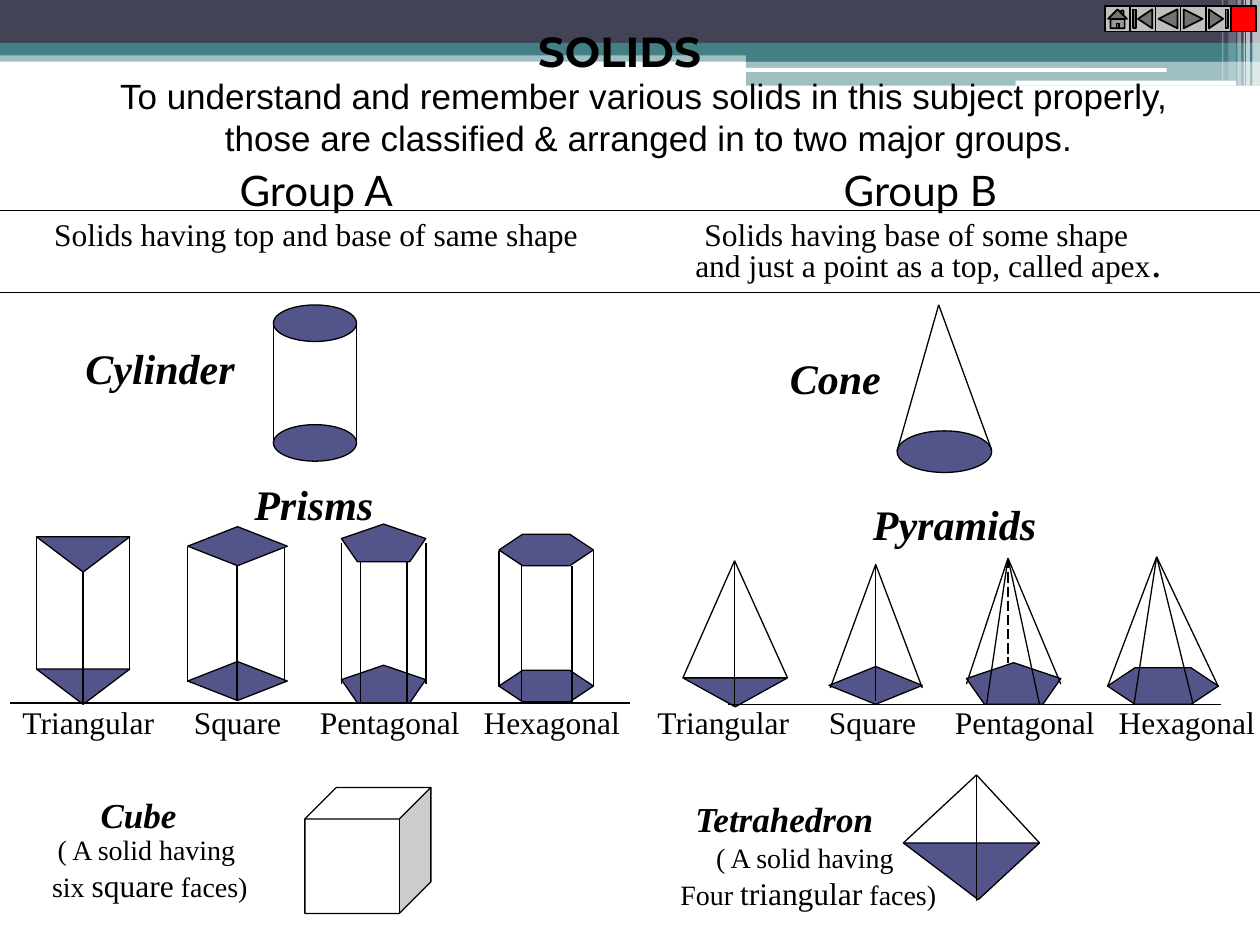
from dataclasses import dataclass

from lxml.etree import SubElement
from pptx import Presentation
from pptx.dml.color import RGBColor
from pptx.enum.dml import MSO_LINE
from pptx.enum.shapes import MSO_CONNECTOR, MSO_SHAPE
from pptx.enum.text import MSO_ANCHOR, MSO_AUTO_SIZE, PP_ALIGN
from pptx.oxml.ns import qn
from pptx.util import Inches, Pt

COLORS = {"ink": "000000", "paper": "FFFFFF", "face": "53548A", "navy": "424456",
          "teal": "438086", "button": "C0C0C0", "stop": "FF0000"}
SERIF = "Times New Roman"
Point = tuple[float, float]
Box = tuple[float, float, float, float]


@dataclass
class Bar:
    box: Box
    color: str
    opacity: int = 100
    shape: MSO_SHAPE = MSO_SHAPE.RECTANGLE


@dataclass
class Face:
    shape: MSO_SHAPE
    box: Box
    adjustment: float | None = None
    turned: bool = False


@dataclass
class Prism:
    """Edges start at the given points and run down by the height."""
    top: Face
    height: float
    edges: list[Point]


@dataclass
class Pyramid:
    base: Face
    apex: Point
    feet: list[Point]
    hidden_foot: Point | None = None


@dataclass
class Run:
    text: str
    size: int
    font: str = SERIF
    bold: bool = False
    italic: bool = False


@dataclass
class Caption:
    box: Box
    lines: list[list[Run]]
    centered: bool = False
    wrap: bool = False
    tabs: tuple[float, ...] = ()


def rgb(name: str) -> RGBColor:
    return RGBColor.from_string(COLORS[name])


def heading(text: str, size: int = 24) -> list[list[Run]]:
    return [[Run(text, size, bold=True, italic=True)]]


def add_filled(slide, kind: MSO_SHAPE, box: Box, color: str, outline: float = 0):
    shape = slide.shapes.add_shape(kind, *map(Inches, box))
    shape.shadow.inherit = False
    shape.fill.solid()
    shape.fill.fore_color.rgb = rgb(color)
    if outline:
        shape.line.color.rgb = rgb("ink")
        shape.line.width = Pt(outline)
    else:
        shape.line.fill.background()
    return shape


def add_bar(slide, bar: Bar) -> None:
    shape = add_filled(slide, bar.shape, bar.box, bar.color)
    if bar.opacity < 100:
        color = shape.element.spPr.find(f"{qn('a:solidFill')}/{qn('a:srgbClr')}")
        SubElement(color, qn("a:alpha"), val=str(bar.opacity * 1000))


def add_edge(slide, start: Point, end: Point, dashed: bool = False) -> None:
    edge = slide.shapes.add_connector(MSO_CONNECTOR.STRAIGHT, *map(Inches, start + end))
    edge.line.color.rgb = rgb("ink")
    edge.line.width = Pt(0.75)
    if dashed:
        edge.line.dash_style = MSO_LINE.LONG_DASH
    SubElement(edge.element.spPr, qn("a:effectLst"))


def add_face(slide, face: Face, drop: float = 0) -> None:
    left, top, width, height = face.box
    shape = add_filled(slide, face.shape, (left, top + drop, width, height), "face", 0.75)
    if face.adjustment is not None:
        shape.adjustments[0] = face.adjustment
    if face.turned:
        shape.rotation = 180


def add_prism(slide, prism: Prism) -> None:
    add_face(slide, prism.top)
    add_face(slide, prism.top, prism.height)
    for x, y in prism.edges:
        add_edge(slide, (x, y), (x, y + prism.height))


def add_pyramid(slide, pyramid: Pyramid) -> None:
    add_face(slide, pyramid.base)
    for foot in pyramid.feet:
        add_edge(slide, pyramid.apex, foot)
    if pyramid.hidden_foot:
        add_edge(slide, pyramid.apex, pyramid.hidden_foot, dashed=True)


def write(frame, caption: Caption) -> None:
    frame.word_wrap = caption.wrap
    frame.auto_size = MSO_AUTO_SIZE.SHAPE_TO_FIT_TEXT
    frame.vertical_anchor = MSO_ANCHOR.TOP
    for index, line in enumerate(caption.lines):
        paragraph = frame.add_paragraph() if index else frame.paragraphs[0]
        paragraph.alignment = PP_ALIGN.CENTER if caption.centered else PP_ALIGN.LEFT
        if caption.tabs:
            stops = SubElement(paragraph._p.get_or_add_pPr(), qn("a:tabLst"))
            for stop in caption.tabs:
                SubElement(stops, qn("a:tab"), pos=str(Inches(stop)), algn="l")
        for part in line:
            run = paragraph.add_run()
            run.text = part.text
            run.font.size = Pt(part.size)
            run.font.name = part.font
            run.font.bold = part.bold
            run.font.italic = part.italic
            run.font.color.rgb = rgb("ink")


BARS = [
    Bar((0, 0.4, 10, 0.09), "teal", 50), Bar((0, 0, 10, 0.34), "navy"),
    Bar((0, 0.34, 10, 0.1), "teal"), Bar((5.92, 0.39, 4.08, 0.1), "teal"),
    Bar((5.92, 0.48, 4.08, 0.2), "teal", 50),
    Bar((5.91, 0.54, 3.35, 0.03), "paper", shape=MSO_SHAPE.ROUNDED_RECTANGLE),
    Bar((8.06, 0.64, 1.75, 0.04), "paper", shape=MSO_SHAPE.ROUNDED_RECTANGLE),
] + [Bar((left, 0, width, height), "paper", opacity) for left, width, height, opacity in [
    (9.94, 0.06, 0.68, 65), (9.89, 0.03, 0.68, 65), (9.87, 0.01, 0.68, 60),
    (9.82, 0.03, 0.68, 40), (9.75, 0.06, 0.64, 20), (9.7, 0.01, 0.64, 30)]]

TRIANGLE, DIAMOND = MSO_SHAPE.ISOSCELES_TRIANGLE, MSO_SHAPE.DIAMOND
PENTAGON, HEXAGON = MSO_SHAPE.REGULAR_PENTAGON, MSO_SHAPE.HEXAGON
PRISMS = [
    Prism(Face(MSO_SHAPE.OVAL, (2.17, 2.42, 0.66, 0.29)), 0.95, [(2.17, 2.56), (2.83, 2.56)]),
    Prism(Face(TRIANGLE, (0.29, 4.26, 0.74, 0.28), turned=True), 1.05,
          [(0.29, 4.26), (1.03, 4.26), (0.66, 4.53)]),
    Prism(Face(DIAMOND, (1.49, 4.18, 0.79, 0.31)), 1.07,
          [(1.49, 4.34), (2.26, 4.34), (1.88, 4.49)]),
    Prism(Face(PENTAGON, (2.71, 4.16, 0.67, 0.3)), 1.12,
          [(2.71, 4.31), (3.38, 4.31), (3.23, 4.46), (2.86, 4.46)]),
    Prism(Face(HEXAGON, (3.96, 4.24, 0.75, 0.25), 0.75), 1.08,
          [(3.96, 4.37), (4.14, 4.49), (4.71, 4.37), (4.54, 4.49)]),
]
PYRAMIDS = [
    Pyramid(Face(MSO_SHAPE.OVAL, (7.12, 3.42, 0.75, 0.33)), (7.45, 2.42),
            [(7.12, 3.58), (7.87, 3.57)]),
    Pyramid(Face(TRIANGLE, (5.42, 5.38, 0.83, 0.23), turned=True), (5.83, 4.45),
            [(5.42, 5.38), (6.25, 5.38), (5.83, 5.61)]),
    Pyramid(Face(DIAMOND, (6.58, 5.29, 0.74, 0.3)), (6.95, 4.48),
            [(6.59, 5.46), (7.32, 5.46), (6.95, 5.56)]),
    Pyramid(Face(PENTAGON, (7.67, 5.26, 0.75, 0.33)), (8, 4.43),
            [(7.67, 5.43), (8.42, 5.43), (8.25, 5.59), (7.83, 5.59)], (8, 5.26)),
    Pyramid(Face(HEXAGON, (8.79, 5.3, 0.88, 0.29), 0.75), (9.18, 4.42),
            [(8.79, 5.45), (9, 5.59), (9.67, 5.45), (9.47, 5.59)]),
    Pyramid(Face(TRIANGLE, (7.17, 6.69, 1.08, 0.45), 0.45, True), (7.75, 6.15),
            [(7.17, 6.69), (8.25, 6.69), (7.75, 7.15)]),
]
RULES = [((0.08, 5.58), (5, 5.58)), ((5.78, 5.59), (9.69, 5.59)),
         ((0, 1.67), (10, 1.67)), ((0, 2.32), (10, 2.32))]

TITLE = Caption((4.17, 0.15, 1.57, 0.5), [[Run("SOLIDS", 24, "Montserrat", bold=True)]])
CAPTIONS = [
    Caption((0.84, 0.54, 8.62, 0.77), [[Run(line, 20, "Arial")] for line in (
        "To understand and remember various solids in this subject properly, ",
        "those are classified & arranged in to two major groups.")], centered=True),
    Caption((5.42, 1.82, 3.9, 0.5),
            [[Run("and just a point as a top, called apex", 18), Run(".", 24)]], wrap=True),
    Caption((0.58, 2.67, 1.39, 0.5), heading("Cylinder")),
    Caption((1.92, 3.75, 1.15, 0.5), heading("Prisms")),
    Caption((0.7, 6.25, 0.8, 0.43), heading("Cube", 20)),
    Caption((6.17, 2.75, 0.92, 0.5), heading("Cone")),
    Caption((6.83, 3.91, 1.5, 0.5), heading("Pyramids")),
    Caption((5.42, 6.28, 1.64, 0.43), heading("Tetrahedron", 20)),
] + [Caption(box, [[Run(group, 24, "Lato")], [Run(meaning, 18)]], centered=True)
     for box, group, meaning in [
         ((0.33, 1.26, 4.36, 0.8), "Group A", "Solids having top and base of same shape"),
         ((5.49, 1.26, 3.63, 0.8), "Group B", "Solids having base of some shape ")]
] + [Caption((left, 5.53, 4.96, 0.4), [[Run("Triangular\tSquare\tPentagonal\tHexagonal", 18)]],
             wrap=True, tabs=(1.36, 2.36, 3.66)) for left in (0.08, 5.12)
] + [Caption(box, [[Run("( A solid having ", 16)],
                   [Run(f"{count} ", 16), Run(outline, 18), Run(" faces)", 16)]], centered=True)
     for box, count, outline in [((0.31, 6.56, 1.76, 0.67), "six", "square"),
                                 ((5.27, 6.62, 2.29, 0.67), "Four", "triangular")]]

BUTTONS = [MSO_SHAPE.ACTION_BUTTON_HOME, MSO_SHAPE.ACTION_BUTTON_BEGINNING,
           MSO_SHAPE.ACTION_BUTTON_BACK_OR_PREVIOUS, MSO_SHAPE.ACTION_BUTTON_FORWARD_OR_NEXT,
           MSO_SHAPE.ACTION_BUTTON_END, MSO_SHAPE.ACTION_BUTTON_CUSTOM]


def main() -> None:
    deck = Presentation()
    deck.slide_width, deck.slide_height = Inches(10), Inches(7.5)
    slide = deck.slides.add_slide(deck.slide_layouts[5])
    for bar in BARS:
        add_bar(slide, bar)
    for prism in PRISMS:
        add_prism(slide, prism)
    for pyramid in PYRAMIDS:
        add_pyramid(slide, pyramid)
    add_filled(slide, MSO_SHAPE.CUBE, (2.42, 6.25, 1, 1), "paper", 0.75)
    for start, end in RULES:
        add_edge(slide, start, end)

    title = slide.shapes.title
    title.left, title.top, title.width, title.height = map(Inches, TITLE.box)
    write(title.text_frame, TITLE)
    title.element.getparent().append(title.element)  # in front of the banner
    for caption in CAPTIONS:
        write(slide.shapes.add_textbox(*map(Inches, caption.box)).text_frame, caption)
    for index, button in enumerate(BUTTONS):
        color = "stop" if button == MSO_SHAPE.ACTION_BUTTON_CUSTOM else "button"
        add_filled(slide, button, (8.77 + 0.2 * index, 0.05, 0.2, 0.2), color, 1)
    deck.save("out.pptx")


if __name__ == "__main__":
    main()
